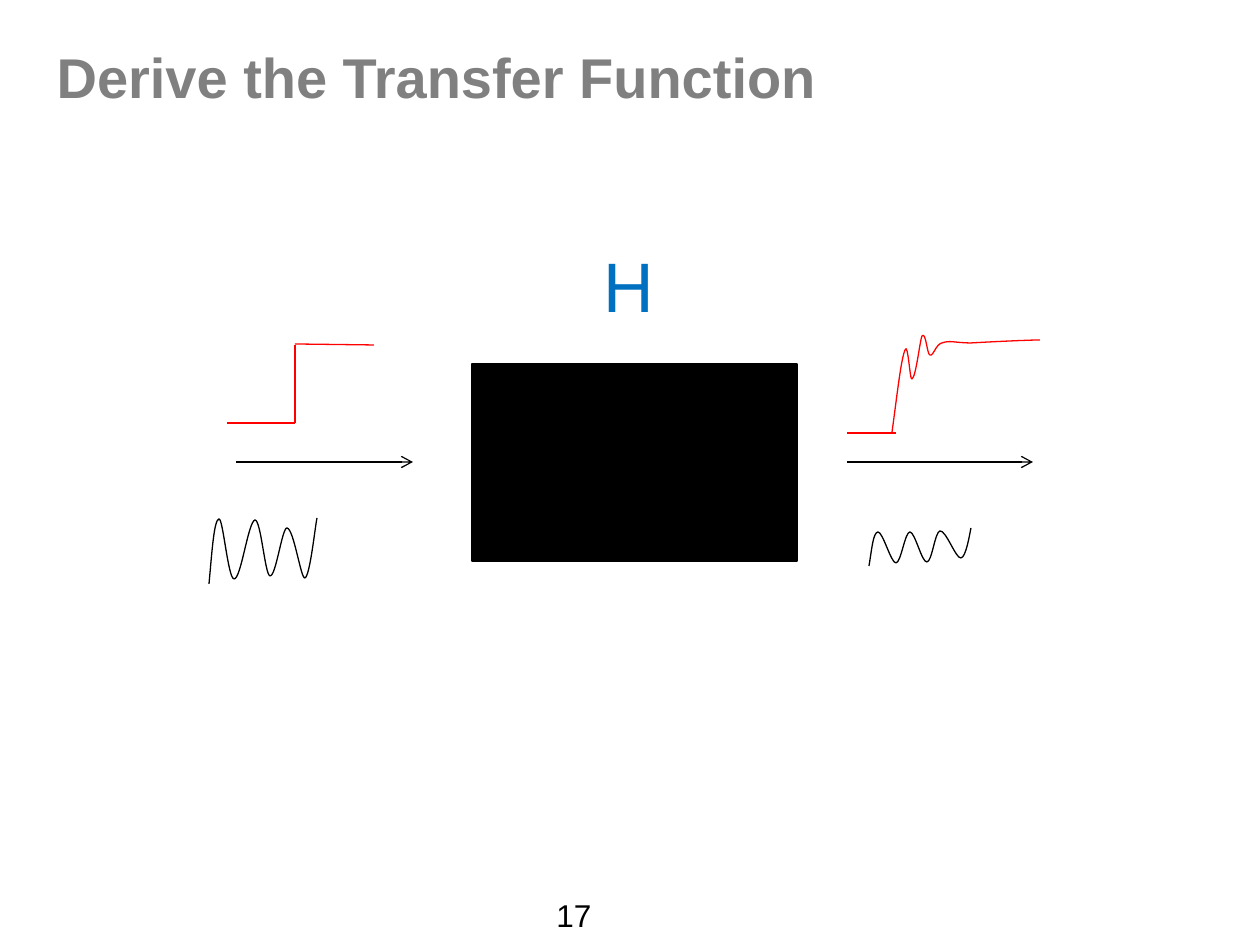
from lxml.etree import SubElement
from pptx import Presentation
from pptx.dml.color import RGBColor
from pptx.enum.shapes import MSO_CONNECTOR, MSO_SHAPE
from pptx.enum.text import MSO_ANCHOR, PP_ALIGN
from pptx.oxml.ns import qn
from pptx.util import Inches, Pt

COLORS = {"title": "808080", "symbol": "0070C0", "step": "FF0000",
          "ink": "000000", "paper": "FFFFFF"}
FONT = "Arial"
EMU_PER_PIXEL = Inches(1) / 126

TITLE = ("Derive the Transfer Function", (44, 36, 942, 139))
PAGE_NUMBER = ("17", (544, 890, 175, 50))
SYMBOL = ("H", (591, 236, 88, 97))
BLACK_BOX = (472, 364, 325, 197)

ARROWS = [(236, 462, 413, 462), (847, 462, 1033, 462)]
INPUT_STEP = [(227, 423, 295, 423), (295, 423, 295, 345), (295, 344, 374, 345)]
OUTPUT_BASELINE = (847, 433, 896, 433)

# Each curve is a start point, then two control points and an end point per segment.
STEP_RESPONSE = [
    (892, 432),
    (897, 396), (901, 359), (905, 350),
    (908, 341), (910, 382), (912, 379),
    (916, 377), (920, 340), (922, 336),
    (926, 331), (927, 355), (930, 355),
    (933, 357), (936, 344), (942, 343),
    (950, 340), (955, 343), (971, 343),
    (988, 342), (1029, 340), (1040, 340),
]
INPUT_WAVE = [
    (209, 584),
    (212, 552), (214, 520), (219, 519),
    (223, 518), (228, 578), (234, 579),
    (241, 580), (248, 522), (255, 520),
    (261, 520), (265, 575), (270, 576),
    (276, 577), (282, 528), (287, 528),
    (294, 529), (301, 580), (305, 578),
    (310, 576), (315, 528), (317, 518),
]
OUTPUT_WAVE = [
    (869, 566),
    (872, 549), (873, 533), (878, 532),
    (883, 532), (891, 563), (896, 563),
    (901, 563), (905, 532), (910, 532),
    (915, 532), (922, 563), (927, 562),
    (932, 562), (935, 532), (940, 531),
    (946, 530), (956, 559), (961, 558),
    (966, 558), (970, 533), (971, 528),
]


def emu(*pixels):
    return [round(pixel * EMU_PER_PIXEL) for pixel in pixels]


def color(name):
    return RGBColor.from_string(COLORS[name])


def set_line(shape, name):
    shape.line.color.rgb = color(name)
    shape.line.width = Pt(0.75)


def set_fill(shape, name):
    shape.fill.solid()
    shape.fill.fore_color.rgb = color(name)
    shape.shadow.inherit = False


def write(box, text, size, name, bold=False, wrap=True):
    frame = box.text_frame
    frame.word_wrap = wrap
    frame.vertical_anchor = MSO_ANCHOR.TOP
    para = frame.paragraphs[0]
    para.text = text
    para.alignment = PP_ALIGN.LEFT
    para.font.name = FONT
    para.font.size = Pt(size)
    para.font.bold = bold
    para.font.color.rgb = color(name)


def add_line(shapes, ends, name, arrow=False):
    line = shapes.add_connector(MSO_CONNECTOR.STRAIGHT, *emu(*ends))
    set_line(line, name)
    properties = line._element.spPr
    if arrow:
        SubElement(properties.find(qn("a:ln")), qn("a:tailEnd"), type="arrow")
    SubElement(properties, qn("a:effectLst"))


def add_curve(shapes, knots, name):
    """Draw a freeform and turn each three straight segments into one cubic Bézier."""
    start, *others = [emu(*knot) for knot in knots]
    builder = shapes.build_freeform(*start)
    builder.add_line_segments(others, close=False)
    curve = builder.convert_to_shape()
    segments = list(curve._element.iter(qn("a:lnTo")))
    outline = segments[0].getparent()
    for first in range(0, len(segments), 3):
        bezier = SubElement(outline, qn("a:cubicBezTo"))
        for segment in segments[first:first + 3]:
            bezier.append(segment[0])
            outline.remove(segment)
    set_fill(curve, "paper")
    set_line(curve, name)


def main():
    deck = Presentation()
    deck.slide_width, deck.slide_height = Inches(10), Inches(7.5)
    page = deck.slides.add_slide(deck.slide_layouts[5])
    shapes = page.shapes

    text, place = TITLE
    title = shapes.title
    title.left, title.top, title.width, title.height = emu(*place)
    write(title, text, 32, "title", bold=True)

    text, place = PAGE_NUMBER
    write(shapes.add_textbox(*emu(*place)), text, 18, "ink")

    black_box = shapes.add_shape(MSO_SHAPE.RECTANGLE, *emu(*BLACK_BOX))
    set_fill(black_box, "ink")
    set_line(black_box, "ink")

    for ends in ARROWS:
        add_line(shapes, ends, "ink", arrow=True)

    text, place = SYMBOL
    write(shapes.add_textbox(*emu(*place)), text, 40, "symbol", wrap=False)

    input_step = shapes.add_group_shape().shapes
    for ends in INPUT_STEP:
        add_line(input_step, ends, "step")

    output_step = shapes.add_group_shape().shapes
    add_line(output_step, OUTPUT_BASELINE, "step")
    add_curve(output_step, STEP_RESPONSE, "step")

    for wave in (INPUT_WAVE, OUTPUT_WAVE):
        add_curve(shapes, wave, "ink")

    deck.save("out.pptx")


if __name__ == "__main__":
    main()
